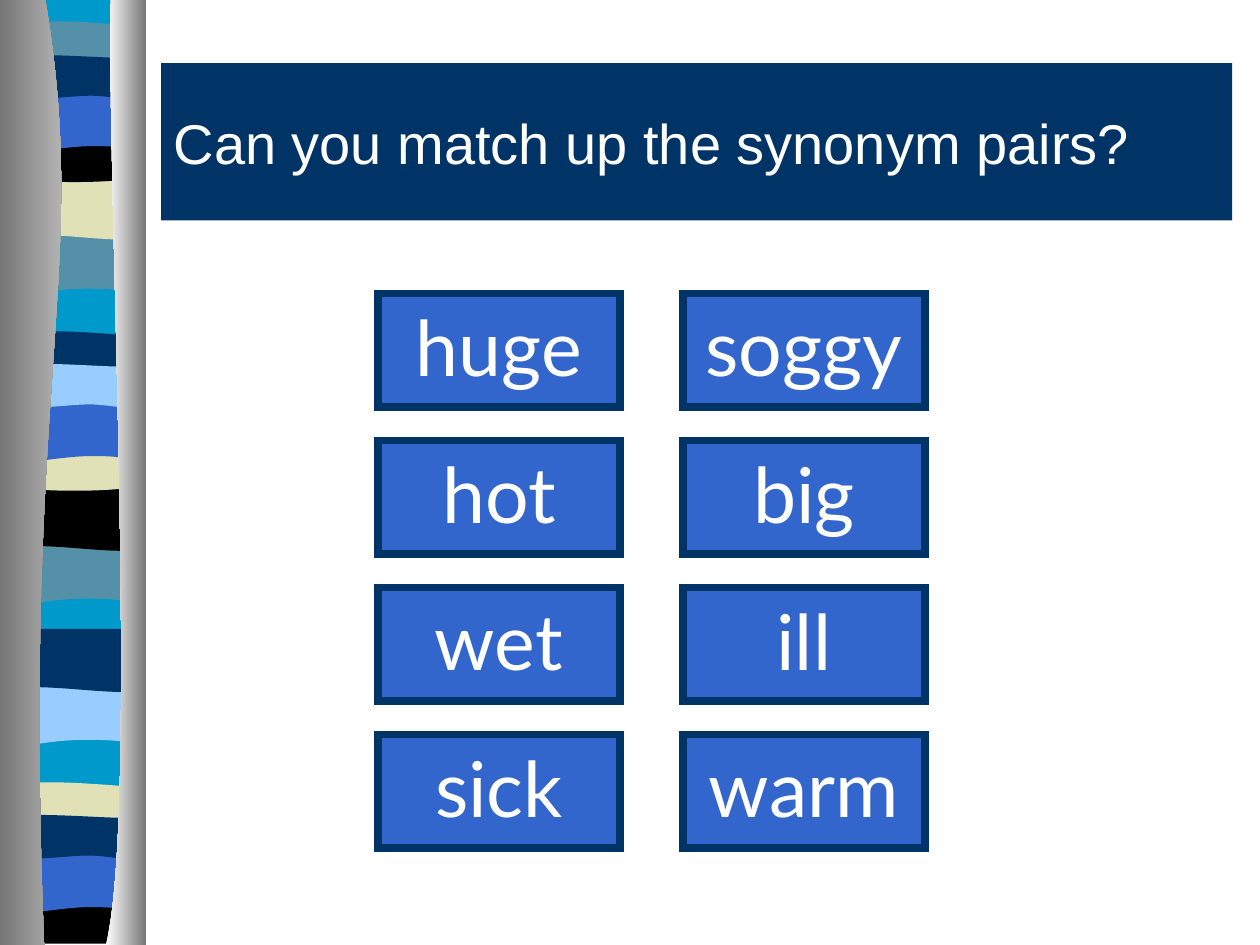
"""Build a synonym matching slide with a striped ribbon down the left side."""
import lxml.etree
import pptx
import pptx.dml.color
import pptx.enum.shapes
import pptx.enum.text
import pptx.oxml.ns
import pptx.util

TITLE = "Can you match up the synonym pairs?"
PAIRS = [("huge", "soggy"), ("hot", "big"), ("wet", "ill"), ("sick", "warm")]


class Theme:
    navy, blue, sky, aqua = "003366", "3366CC", "99CCFF", "0099CC"
    teal, sand, black, white = "5490A8", "E1E1B7", "000000", "FFFFFF"
    steel, silver = "767676", "D0D0D0"
    title_font, title_size = "Arial", 32
    card_font, card_size, card_line = "Lato", 44, 4.5


WIDTH, HEIGHT = 10, 7.5
TITLE_BOX = (1.28, 0.5, 8.5, 1.25)
GRID_LEFT, GRID_TOP, COLUMN_STEP, ROW_STEP = 3, 2.33, 2.42, 3.5 / 3
CARD_WIDTH, CARD_HEIGHT = 1.92, 0.9
BAND = 1.08

MOTIFS = {
    "dip": [(BAND, 0), (BAND, 0.47), (0.34, 0.38, 0.19, 0.54, 0, 0.47), (0, 0)],
    "roll": [(BAND, 0), (BAND, 0.48), (0.9, 0.55, 0.33, 0.42, 0, 0.48), (0, 0)],
    "ribbon": [(BAND, 0.05), (BAND, 0.29), (0.9, 0.33, 0.18, 0.33, 0, 0.29), (0, 0.05),
               (0.07, 0, 0.23, 0.01, 0.41, 0.01), (0.59, 0.01, 0.94, 0.04, BAND, 0.05)],
    "sag": [(BAND, 0), (BAND, 0.32), (0.9, 0.38, 0.18, 0.38, 0, 0.32), (0, 0),
            (0.67, 0.05, 0.86, 0, BAND, 0)],
    "crest": [(BAND, 0), (BAND, 0.48), (0.91, 0.42, 0.84, 0.42, 0.66, 0.42),
              (0.48, 0.42, 0.16, 0.48, 0, 0.48), (0, 0)],
    "swell": [(BAND, 0.05), (BAND, 0.35), (1.01, 0.41, 0.84, 0.35, 0.66, 0.35),
              (0.48, 0.35, 0.11, 0.41, 0, 0.35), (0, 0.05),
              (0.15, 0, 0.73, 0.05, 0.91, 0.05), (1.09, 0.05, 1.05, 0.05, BAND, 0.05)],
    "foot": [(BAND, 0), (BAND, 0.37), (0, 0.37), (0, 0), (0.67, 0.05, 0.86, 0, BAND, 0)],
    "backing": [(BAND, 0), (BAND, 7.48), (0, 7.48), (0, 0)],
}
BANDS = [
    ("backing", Theme.aqua, 0.06, -0.01),
    ("dip", Theme.teal, 0.05, 1.85),
    ("roll", Theme.sand, 0.06, 1.4),
    ("ribbon", Theme.teal, 0.06, 0.16),
    ("sag", Theme.black, 0.05, 1.08),
    ("crest", Theme.blue, 0.06, 0.74),
    ("swell", Theme.navy, 0.06, 0.41),
    ("dip", Theme.teal, 0.05, 4.31),
    ("roll", Theme.black, 0.05, 3.87),
    ("ribbon", Theme.navy, 0.05, 2.62),
    ("sag", Theme.sand, 0.05, 3.53),
    ("crest", Theme.blue, 0.05, 3.2),
    ("swell", Theme.sky, 0.05, 2.86),
    ("dip", Theme.sky, 0.05, 5.43),
    ("roll", Theme.navy, 0.05, 4.99),
    ("ribbon", Theme.sand, 0.04, 6.2),
    ("foot", Theme.black, 0.04, 7.12),
    ("crest", Theme.blue, 0.04, 6.78),
    ("swell", Theme.navy, 0.04, 6.44),
]
COLUMNS = [
    ([(0.36, 0), (0.72, 2.16, 0.17, 2.96, 0.35, HEIGHT), (0, HEIGHT), (0, 0)],
     (Theme.steel, Theme.silver)),
    ([(0.88, 0), (0.84, 1.25, 1.11, 6.46, 0.84, HEIGHT), (1.16, HEIGHT), (1.16, 0)],
     (Theme.white, Theme.steel)),
]


def rgb(value):
    return pptx.dml.color.RGBColor.from_string(value)


def add_outline(page, outline, left=0, top=0):
    """Add a closed outline whose six-number segments are Bezier curves."""
    points = [(pptx.util.Inches(left + x), pptx.util.Inches(top + y))
              for segment in outline for x, y in zip(segment[::2], segment[1::2])]
    builder = page.shapes.build_freeform(*points[0])
    builder.add_line_segments(points[1:], close=True)
    shape = builder.convert_to_shape()
    shape.shadow.inherit = False
    shape.line.fill.background()
    lines = iter(list(shape.element.iter(pptx.oxml.ns.qn("a:lnTo"))))
    for segment in outline[1:]:
        first = next(lines)
        if len(segment) == 6:
            first.tag = pptx.oxml.ns.qn("a:cubicBezTo")
            for line in (next(lines), next(lines)):
                first.append(line[0])
                line.getparent().remove(line)
    return shape


def add_box(page, place, text, fill, font, size, align, anchor):
    box = page.shapes.add_shape(pptx.enum.shapes.MSO_SHAPE.RECTANGLE,
                                *map(pptx.util.Inches, place))
    box.shadow.inherit = False
    box.fill.solid()
    box.fill.fore_color.rgb = rgb(fill)
    box.line.fill.background()
    box.text_frame.word_wrap = True
    box.text_frame.vertical_anchor = anchor
    paragraph = box.text_frame.paragraphs[0]
    paragraph.text = text
    paragraph.alignment = align
    paragraph.font.name = font
    paragraph.font.size = pptx.util.Pt(size)
    paragraph.font.color.rgb = rgb(Theme.white)
    return box


def add_border(box):
    box.line.color.rgb = rgb(Theme.navy)
    box.line.width = pptx.util.Pt(Theme.card_line)
    outline = box.element.spPr.find(pptx.oxml.ns.qn("a:ln"))
    lxml.etree.SubElement(outline, pptx.oxml.ns.qn("a:miter"), lim="800000")


def main():
    deck = pptx.Presentation()
    deck.slide_width = pptx.util.Inches(WIDTH)
    deck.slide_height = pptx.util.Inches(HEIGHT)
    page = deck.slides.add_slide(deck.slide_layouts[6])

    for motif, color, left, top in BANDS:
        band = add_outline(page, MOTIFS[motif], left, top)
        band.fill.solid()
        band.fill.fore_color.rgb = rgb(color)

    for outline, colors in COLUMNS:
        column = add_outline(page, outline)
        column.fill.gradient()
        column.fill.gradient_angle = 0
        for stop, color in zip(column.fill.gradient_stops, colors):
            stop.color.rgb = rgb(color)

    align, anchor = pptx.enum.text.PP_ALIGN, pptx.enum.text.MSO_ANCHOR
    add_box(page, TITLE_BOX, TITLE, Theme.navy, Theme.title_font, Theme.title_size,
            align.LEFT, anchor.MIDDLE)
    for row, pair in enumerate(PAIRS):
        for column, word in enumerate(pair):
            place = (GRID_LEFT + column * COLUMN_STEP, GRID_TOP + row * ROW_STEP,
                     CARD_WIDTH, CARD_HEIGHT)
            card = add_box(page, place, word, Theme.blue, Theme.card_font,
                           Theme.card_size, align.CENTER, anchor.TOP)
            add_border(card)

    deck.save("out.pptx")


if __name__ == "__main__":
    main()
